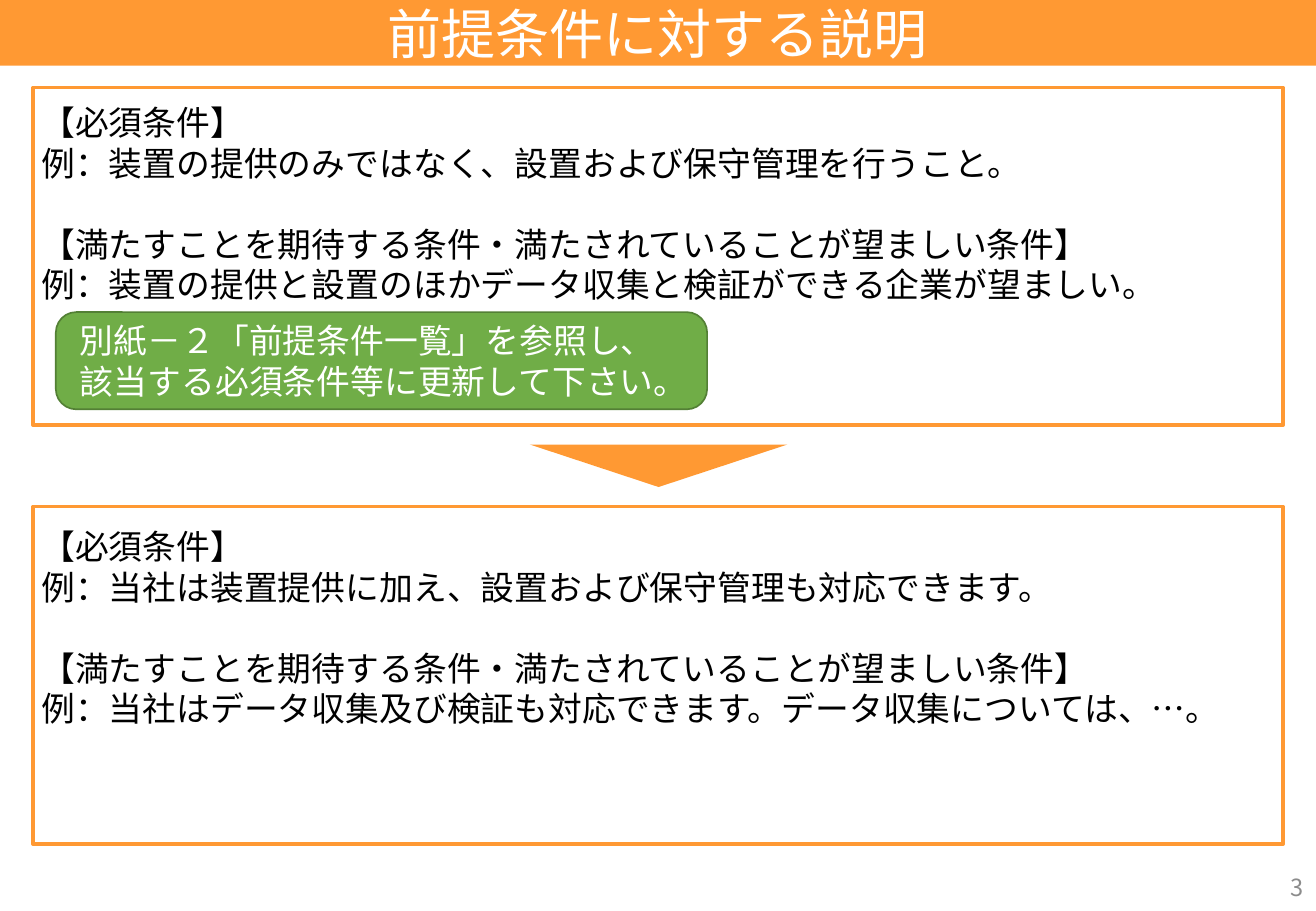
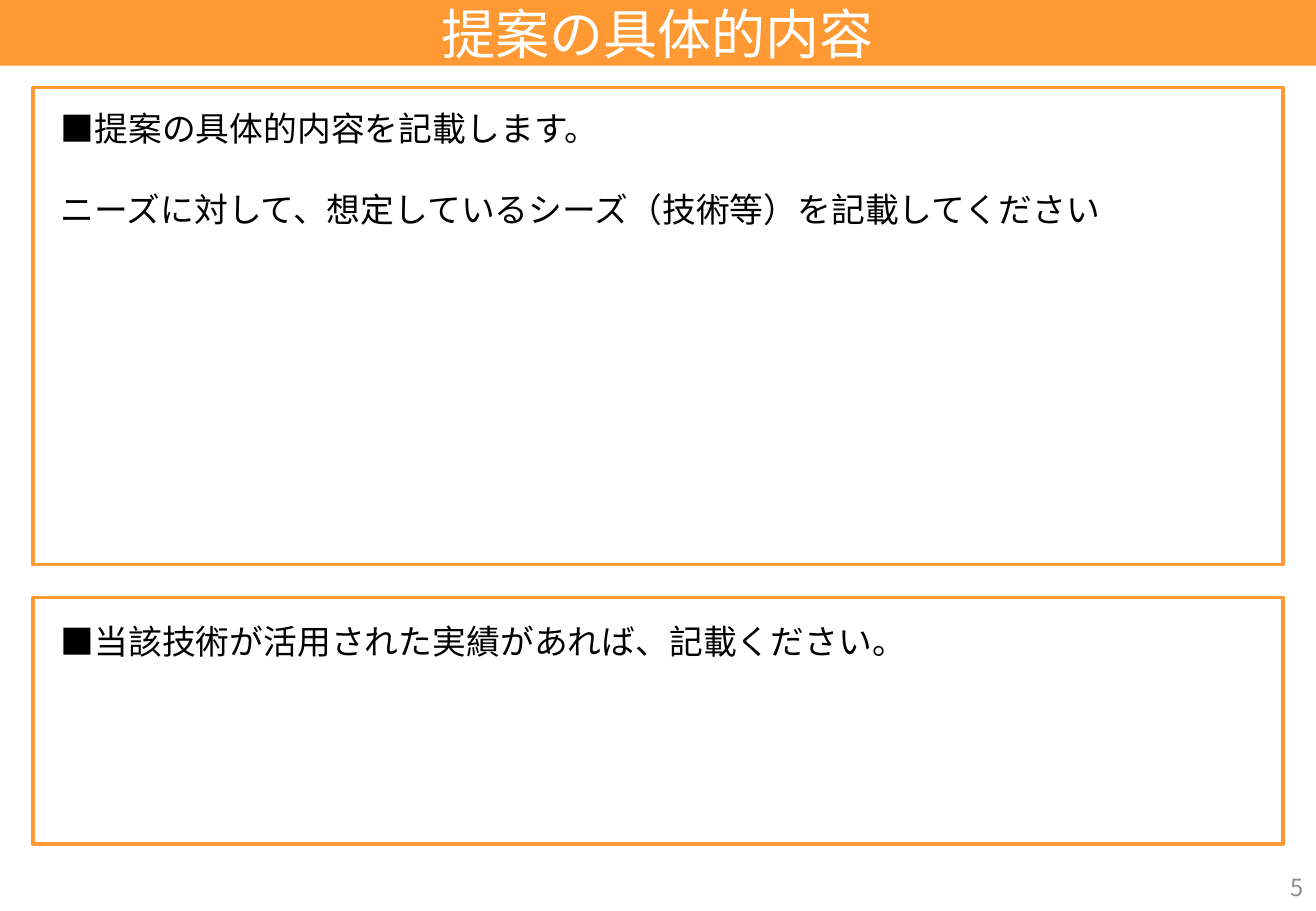
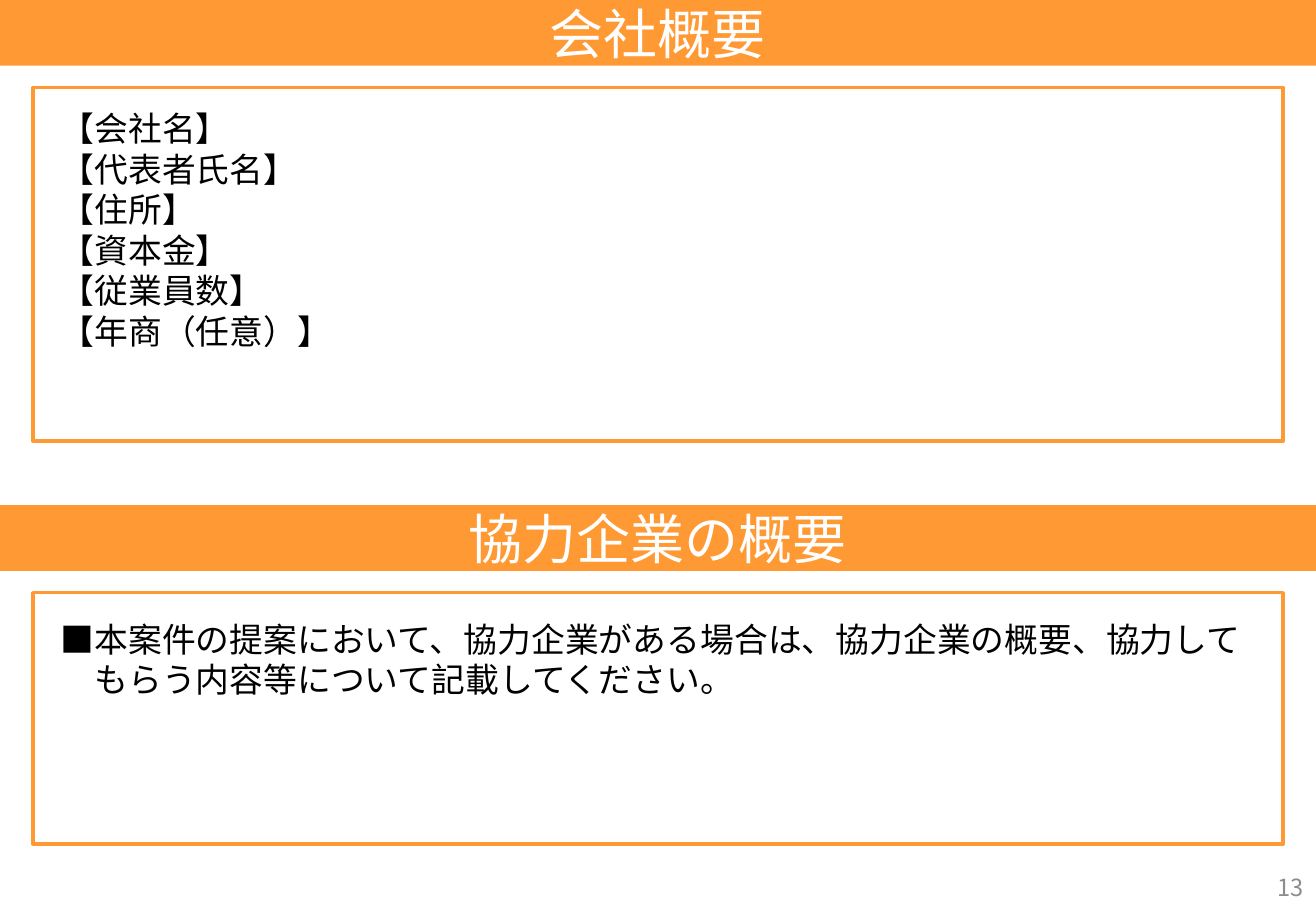
from collections import namedtuple

from lxml import etree
from pptx import Presentation, util as u
from pptx.dml.color import RGBColor
from pptx.enum import shapes, text
from pptx.oxml.ns import qn

Box = namedtuple("Box", "left top width height")

COLORS = {"orange": "FF9933", "green": "70AD47", "dark_green": "538035",
          "white": "FFFFFF", "black": "000000", "gray": "8C8C8C"}
FONT = "Noto Sans CJK JP"
TITLE_SIZE, BODY_SIZE, NUMBER_SIZE = 32, 20, 14
LINE_PITCH = 24

PAGE = Box(0, 0, 10.83, 7.5)
MARGIN = 0.27
BAND_HEIGHT = 0.54
BAND_GAP = 0.18
BODY_TOP = BAND_HEIGHT + BAND_GAP
BODY_BOTTOM = 6.95


def inches(box):
    return [u.Inches(round(length, 2)) for length in box]


def color(name):
    return RGBColor.from_string(COLORS[name])


def frame_box(top, bottom):
    return Box(MARGIN, top, PAGE.width - 2 * MARGIN, bottom - top)


# Shared parts
def add_shape(page, kind, box, fill=None, line=None, line_width=2):
    shape = page.shapes.add_shape(kind, *inches(box))
    shape.shadow.inherit = False
    if fill:
        shape.fill.solid()
        shape.fill.fore_color.rgb = color(fill)
    else:
        shape.fill.background()
    if line:
        shape.line.color.rgb = color(line)
        shape.line.width = u.Pt(line_width)
    else:
        shape.line.fill.background()
    return shape


def write_groups(shape, groups, size=BODY_SIZE, tint="black", inset=0,
                 align=text.PP_ALIGN.LEFT, anchor=text.MSO_ANCHOR.TOP, pitch=LINE_PITCH):
    """Write groups of lines, one line of space between groups."""
    frame = shape.text_frame
    frame.word_wrap = True
    frame.vertical_anchor = anchor
    frame.margin_left = frame.margin_right = u.Inches(inset)
    frame.margin_top = frame.margin_bottom = 0
    para = frame.paragraphs[0]
    for group_index, group in enumerate(groups):
        for line_index, line in enumerate(group):
            if group_index or line_index:
                para = frame.add_paragraph()
            para.alignment = align
            if pitch:
                para.line_spacing = u.Pt(pitch)
            if group_index and not line_index:
                para.space_before = u.Pt(pitch)
            if line.startswith("■"):  # hanging indent, one character wide
                properties = para._p.get_or_add_pPr()
                properties.set("marL", str(u.Pt(size)))
                properties.set("indent", str(-u.Pt(size)))
            span = para.add_run()
            span.text = line
            span.font.size = u.Pt(size)
            span.font.name = FONT
            span.font.color.rgb = color(tint)
            east_asian = etree.SubElement(span._r.get_or_add_rPr(), qn("a:ea"))
            east_asian.set("typeface", FONT)


def add_band(page, top, title):
    band = add_shape(page, shapes.MSO_SHAPE.RECTANGLE,
                     Box(0, top, PAGE.width, BAND_HEIGHT), fill="orange")
    write_groups(band, [[title]], TITLE_SIZE, "white", align=text.PP_ALIGN.CENTER,
                 anchor=text.MSO_ANCHOR.MIDDLE, pitch=None)


def add_frame(page, box, groups, indent, drop):
    """Outlined frame with its text set in from the left and the top."""
    add_shape(page, shapes.MSO_SHAPE.RECTANGLE, box, line="orange")
    area = Box(box.left + indent, box.top + drop,
               box.width - 2 * indent, box.height - 2 * drop)
    write_groups(page.shapes.add_textbox(*inches(area)), groups)


def add_page(deck, title, number):
    page = deck.slides.add_slide(deck.slide_layouts[6])
    add_band(page, 0, title)
    width, height = 2.44, 0.4
    corner = Box(PAGE.width - width, PAGE.height - height, width, height)
    write_groups(page.shapes.add_textbox(*inches(corner)), [[str(number)]],
                 NUMBER_SIZE, "gray", inset=0.1, align=text.PP_ALIGN.RIGHT,
                 anchor=text.MSO_ANCHOR.MIDDLE, pitch=None)
    return page


# Parts of the conditions slide
def add_note(page, frame, lines):
    box = Box(frame.left + 0.19, frame.top + 1.85, 5.36, 0.8)
    note = add_shape(page, shapes.MSO_SHAPE.ROUNDED_RECTANGLE, box,
                     "green", "dark_green", 1)
    note.adjustments[0] = 0.21
    write_groups(note, [lines], tint="white", inset=0.15,
                 anchor=text.MSO_ANCHOR.MIDDLE)


def add_down_arrow(page, upper, lower):
    """Triangle centred in the space between two frames."""
    width, height = 2.12, 0.35
    middle = (upper.top + upper.height + lower.top) / 2
    arrow = add_shape(page, shapes.MSO_SHAPE.ISOSCELES_TRIANGLE,
                      Box((PAGE.width - width) / 2, middle - height / 2, width, height),
                      fill="orange")
    arrow._element.spPr.get_or_add_xfrm().set("flipV", "1")


# Slides
def conditions_slide(deck):
    page = add_page(deck, "前提条件に対する説明", 3)
    upper, lower = frame_box(BODY_TOP, 3.5), frame_box(4.17, BODY_BOTTOM)
    required = "【必須条件】"
    desired = "【満たすことを期待する条件・満たされていることが望ましい条件】"
    add_frame(page, upper, [
        [required, "例：装置の提供のみではなく、設置および保守管理を行うこと。"],
        [desired, "例：装置の提供と設置のほかデータ収集と検証ができる企業が望ましい。"],
    ], 0.07, 0.12)
    add_note(page, upper, ["別紙－２「前提条件一覧」を参照し、",
                           "該当する必須条件等に更新して下さい。"])
    add_down_arrow(page, upper, lower)
    add_frame(page, lower, [
        [required, "例：当社は装置提供に加え、設置および保守管理も対応できます。"],
        [desired, "例：当社はデータ収集及び検証も対応できます。データ収集については、…。"],
    ], 0.07, 0.16)


def proposal_slide(deck):
    page = add_page(deck, "提案の具体的内容", 5)
    add_frame(page, frame_box(BODY_TOP, 4.65), [
        ["■提案の具体的内容を記載します。"],
        ["ニーズに対して、想定しているシーズ（技術等）を記載してください"],
    ], 0.23, 0.17)
    add_frame(page, frame_box(4.92, BODY_BOTTOM),
              [["■当該技術が活用された実績があれば、記載ください。"]], 0.23, 0.19)


def company_slide(deck):
    page = add_page(deck, "会社概要", 13)
    add_frame(page, frame_box(BODY_TOP, 3.63), [
        ["【会社名】", "【代表者氏名】", "【住所】", "【資本金】", "【従業員数】",
         "【年商（任意）】"],
    ], 0.23, 0.17)
    partner_top = 4.16
    add_band(page, partner_top, "協力企業の概要")
    add_frame(page, frame_box(partner_top + BODY_TOP, BODY_BOTTOM), [
        ["■本案件の提案において、協力企業がある場合は、協力企業の概要、協力して"
         "もらう内容等について記載してください。"],
    ], 0.23, 0.21)


def main():
    deck = Presentation()
    deck.slide_width, deck.slide_height = u.Inches(PAGE.width), u.Inches(PAGE.height)
    conditions_slide(deck)
    proposal_slide(deck)
    company_slide(deck)
    deck.save("out.pptx")


if __name__ == "__main__":
    main()
